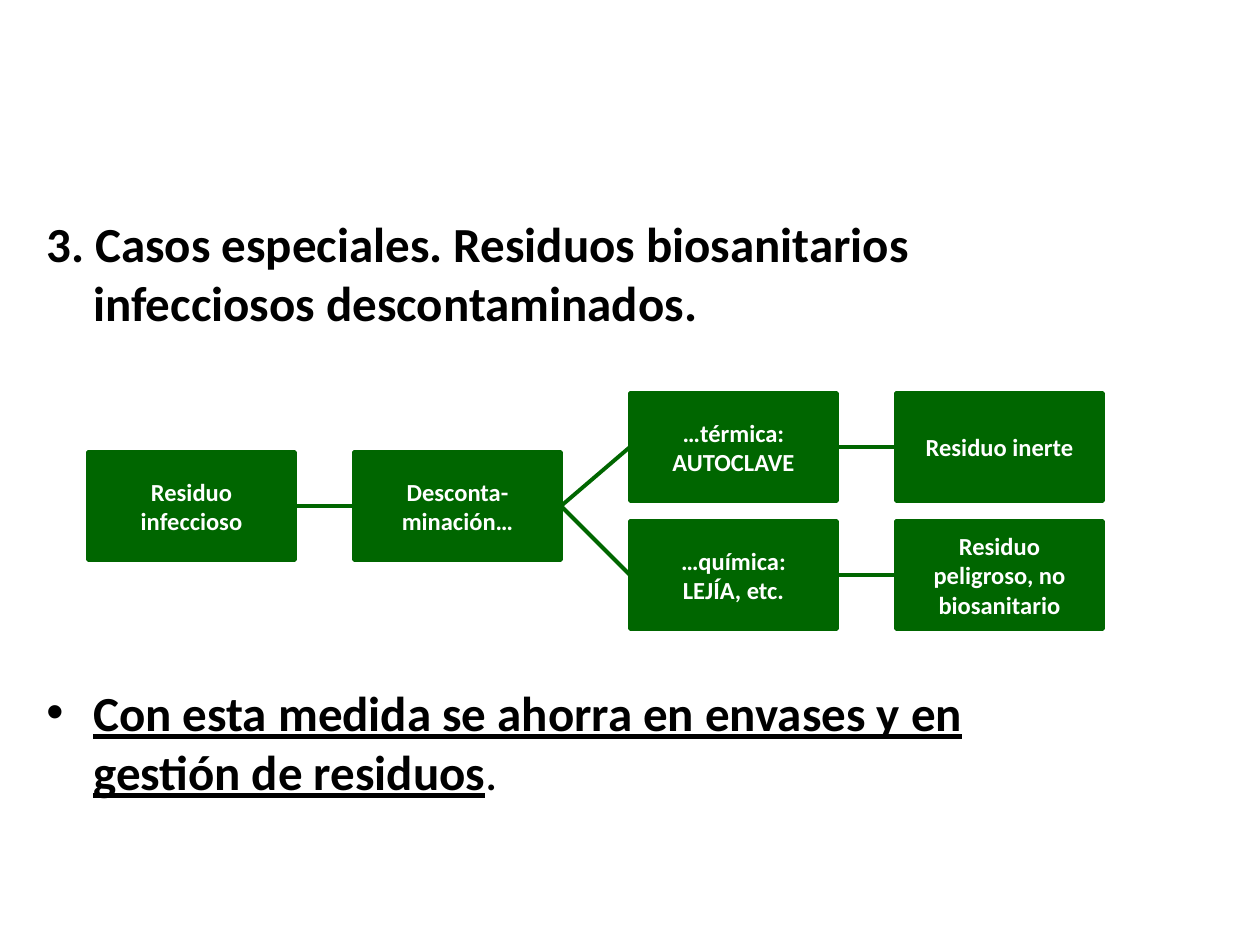
from pptx import Presentation
from pptx import util as u
from pptx.dml.color import RGBColor
from pptx.enum import shapes, text
from pptx.oxml.ns import qn
from lxml import etree

PX = 914400 / 126
COLORS = {"green": "006600", "white": "FFFFFF", "black": "000000"}
FONT = "Calibri"
TOP, LEFT, BOTTOM, RIGHT = range(4)


def px(length):
    return u.Emu(round(length * PX))


def color(name):
    return RGBColor.from_string(COLORS[name])


class SlideBuilder:
    def __init__(self, slide):
        self.slide = slide

    def style(self, font, size, name, bold=True):
        font.name, font.size, font.bold = FONT, u.Pt(size), bold
        font.color.rgb = color(name)

    def text_box(self, left, top, width, height):
        box = self.slide.shapes.add_textbox(px(left), px(top), px(width), px(height))
        box.text_frame.word_wrap = True
        return box.text_frame

    def hanging(self, paragraph, indent, bullet=None):
        properties = paragraph._p.get_or_add_pPr()
        properties.set("marL", str(px(indent)))
        properties.set("indent", str(-px(indent)))
        if bullet:
            etree.SubElement(properties, qn("a:buFont")).set("typeface", "Arial")
            etree.SubElement(properties, qn("a:buChar")).set("char", bullet)

    def step(self, left, top, width, height, content):
        shape = self.slide.shapes.add_shape(
            shapes.MSO_SHAPE.FLOWCHART_PROCESS, px(left), px(top), px(width), px(height))
        shape.shadow.inherit = False
        shape.fill.solid()
        shape.fill.fore_color.rgb = color("green")
        shape.line.color.rgb = color("green")
        shape.line.width = u.Pt(2)
        frame = shape.text_frame
        frame.word_wrap = True
        frame.vertical_anchor = text.MSO_ANCHOR.MIDDLE
        frame.text = content
        for paragraph in frame.paragraphs:
            paragraph.alignment = text.PP_ALIGN.CENTER
            for run in paragraph.runs:
                self.style(run.font, 14, "white")
        return shape

    def link(self, start, end):
        connector = self.slide.shapes.add_connector(shapes.MSO_CONNECTOR.STRAIGHT, 0, 0, 0, 0)
        connector.begin_connect(start, RIGHT)
        connector.end_connect(end, LEFT)
        connector.line.color.rgb = color("green")
        connector.line.width = u.Pt(2.25)
        etree.SubElement(connector._element.spPr, qn("a:effectLst"))


def main():
    presentation = Presentation()
    presentation.slide_width, presentation.slide_height = px(1260), px(945)
    builder = SlideBuilder(presentation.slides.add_slide(presentation.slide_layouts[6]))

    # Heading and conclusion, with room for the diagram between them
    frame = builder.text_box(34, 207, 1089, 709)
    frame.text = "3. Casos especiales. Residuos biosanitarios infecciosos descontaminados."
    heading = frame.paragraphs[0]
    builder.hanging(heading, 47)
    builder.style(heading.runs[0].font, 28, "black")

    conclusion = frame.add_paragraph()
    conclusion.text = "Con esta medida se ahorra en envases y en gestión de residuos"
    conclusion.space_before = u.Pt(201)
    builder.hanging(conclusion, 47, "•")
    builder.style(conclusion.runs[0].font, 28, "black")
    conclusion.runs[0].font.underline = True
    period = conclusion.add_run()
    period.text = "."
    builder.style(period.font, 28, "black", bold=False)

    # Process steps: name -> column, row, text
    columns = (88, 354, 630, 896)
    rows = {"upper": 393, "middle": 452, "lower": 521}
    steps = {
        "waste": (0, "middle", "Residuo infeccioso"),
        "treatment": (1, "middle", "Desconta-minación…"),
        "thermal": (2, "upper", "…térmica:\nAUTOCLAVE"),
        "chemical": (2, "lower", "…química:\nLEJÍA, etc."),
        "inert": (3, "upper", "Residuo inerte"),
        "hazardous": (3, "lower", "Residuo peligroso, no biosanitario"),
    }
    boxes = {name: builder.step(columns[column], rows[row], 207, 108, content)
             for name, (column, row, content) in steps.items()}

    # Links between steps
    for start, end in (("waste", "treatment"), ("treatment", "thermal"),
                       ("treatment", "chemical"), ("thermal", "inert"),
                       ("chemical", "hazardous")):
        builder.link(boxes[start], boxes[end])

    presentation.save("out.pptx")


if __name__ == "__main__":
    main()
